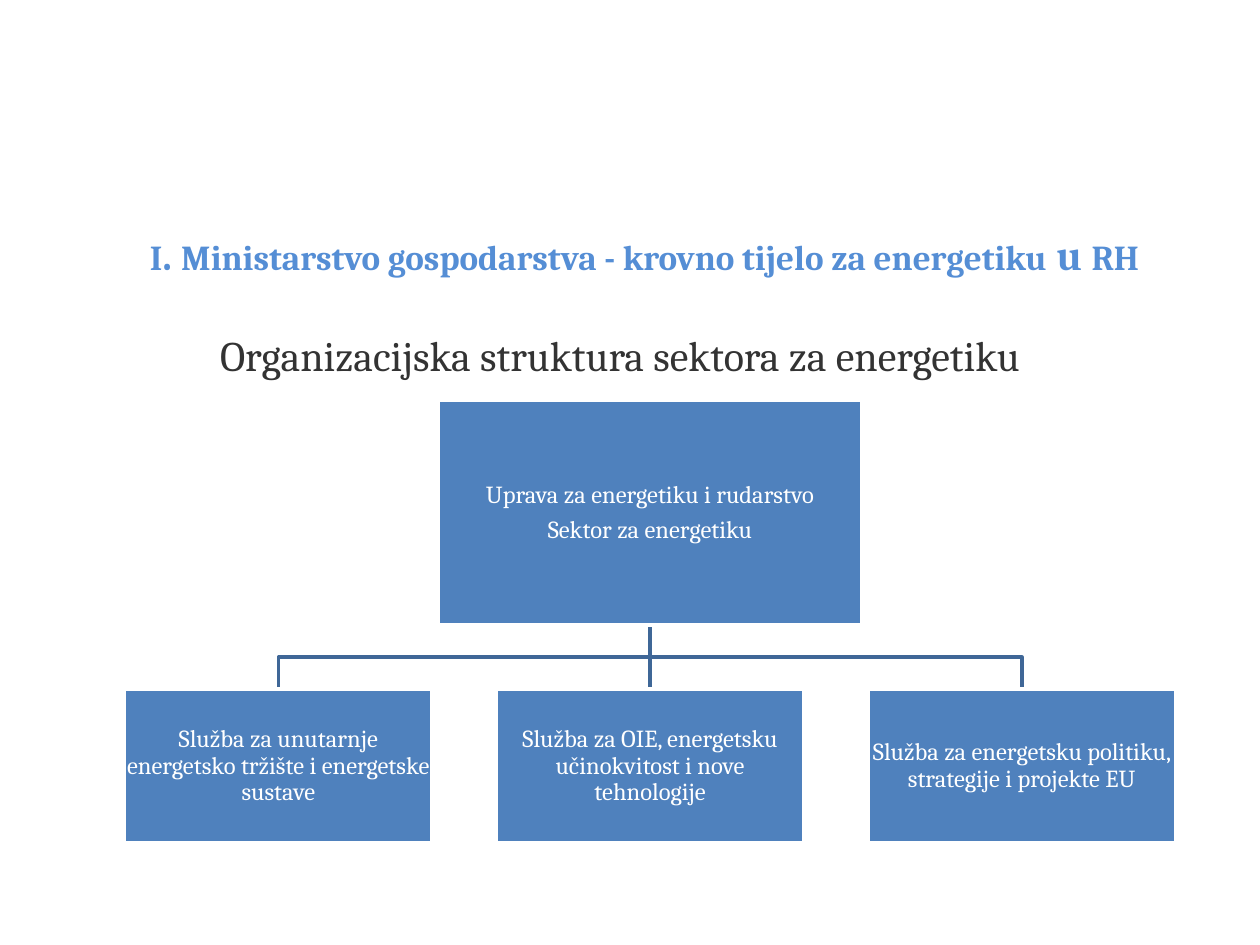
from dataclasses import dataclass
from typing import Any

import lxml.etree
import pptx
import pptx.dml.color
import pptx.enum.shapes
import pptx.enum.text
import pptx.oxml.ns
import pptx.util

Inches = pptx.util.Inches
Pt = pptx.util.Pt
RGBColor = pptx.dml.color.RGBColor
PP_ALIGN = pptx.enum.text.PP_ALIGN
MSO_ANCHOR = pptx.enum.text.MSO_ANCHOR

TITLE_BLUE = RGBColor(0x55, 0x8E, 0xD5)
DARK_GREY = RGBColor(0x33, 0x33, 0x33)
BOX_BLUE = RGBColor(0x4F, 0x81, 0xBD)
LINE_BLUE = RGBColor(0x3F, 0x67, 0x97)
WHITE = RGBColor(0xFF, 0xFF, 0xFF)

FONT = "Cambria"
LINE_WIDTH = Pt(2)
CENTRE = 5.16
UNIT_TOP = 5.47
UNIT_PITCH = 2.95


@dataclass(frozen=True)
class Unit:
    centre: float
    top: float
    width: float
    height: float
    lines: tuple[str, ...]


SECTOR = Unit(
    CENTRE, 3.18, 3.36, 1.78,
    ("Uprava za energetiku i rudarstvo", "Sektor za energetiku"),
)
SERVICES = [
    Unit(CENTRE + offset * UNIT_PITCH, UNIT_TOP, 2.44, 1.22, (text,))
    for offset, text in (
        (-1, "Služba za unutarnje energetsko tržište i energetske sustave"),
        (0, "Služba za OIE, energetsku učinokvitost i nove tehnologije"),
        (1, "Služba za energetsku politiku, strategije i projekte EU"),
    )
]
TITLE_SPANS = (
    ("I", 20),
    (". ", 24),
    ("Ministarstvo gospodarstva - krovno tijelo za energetiku", 20),
    (" u ", 24),
    ("RH", 20),
)


def apply_format(target: Any, values: dict[str, Any]) -> None:
    for name, value in values.items():
        setattr(target, name, value)


def add_span(para: Any, text: str, size: float, color: RGBColor, bold: bool = False) -> None:
    span = para.add_run()
    span.text = text
    apply_format(span.font, {"name": FONT, "size": Pt(size), "bold": bold})
    span.font.color.rgb = color


def add_title(slide: Any) -> None:
    title = slide.shapes.title
    apply_format(title, {
        "left": Inches(0.43), "top": Inches(1.78),
        "width": Inches(9.37), "height": Inches(0.47),
    })
    apply_format(title.text_frame, {"word_wrap": True, "vertical_anchor": MSO_ANCHOR.MIDDLE})
    para = title.text_frame.paragraphs[0]
    para.alignment = PP_ALIGN.CENTER
    for text, size in TITLE_SPANS:
        add_span(para, text, size, TITLE_BLUE, bold=True)


def add_subtitle(slide: Any) -> None:
    box = slide.shapes.add_textbox(Inches(0.67), Inches(2.57), Inches(8.5), Inches(0.5))
    box.text_frame.word_wrap = True
    para = box.text_frame.paragraphs[0]
    para.alignment = PP_ALIGN.CENTER
    add_span(para, "Organizacijska struktura sektora za energetiku", 24, DARK_GREY)


def add_branch(slide: Any, parent: Unit, child: Unit) -> None:
    bottom = parent.top + parent.height
    middle = (bottom + child.top) / 2
    builder = slide.shapes.build_freeform(Inches(parent.centre), Inches(bottom))
    corners = [(parent.centre, middle), (child.centre, middle), (child.centre, child.top)]
    builder.add_line_segments([(Inches(x), Inches(y)) for x, y in corners], close=False)
    branch = builder.convert_to_shape()
    branch.shadow.inherit = False
    branch.fill.background()
    branch.line.color.rgb = LINE_BLUE
    branch.line.width = LINE_WIDTH


def add_stem(slide: Any, parent: Unit, child: Unit) -> Any:
    stem = slide.shapes.add_connector(
        pptx.enum.shapes.MSO_CONNECTOR.STRAIGHT,
        Inches(parent.centre), Inches(parent.top + parent.height),
        Inches(child.centre), Inches(child.top),
    )
    stem.line.color.rgb = LINE_BLUE
    stem.line.width = LINE_WIDTH
    properties = stem._element.spPr
    lxml.etree.SubElement(properties, pptx.oxml.ns.qn("a:effectLst"))
    return stem


def add_unit(slide: Any, unit: Unit) -> Any:
    box = slide.shapes.add_shape(
        pptx.enum.shapes.MSO_SHAPE.RECTANGLE,
        Inches(unit.centre - unit.width / 2), Inches(unit.top),
        Inches(unit.width), Inches(unit.height),
    )
    box.shadow.inherit = False
    box.fill.solid()
    box.fill.fore_color.rgb = BOX_BLUE
    box.line.color.rgb = WHITE
    box.line.width = LINE_WIDTH
    frame = box.text_frame
    margins = ("margin_left", "margin_top", "margin_right", "margin_bottom")
    apply_format(frame, dict.fromkeys(margins, Inches(0.01)))
    apply_format(frame, {"word_wrap": True, "vertical_anchor": MSO_ANCHOR.MIDDLE})
    for index, text in enumerate(unit.lines):
        para = frame.add_paragraph() if index else frame.paragraphs[0]
        apply_format(para, {
            "alignment": PP_ALIGN.CENTER, "line_spacing": 0.9, "space_after": Pt(4.9),
        })
        add_span(para, text, 14, WHITE)
    return box


def main() -> None:
    deck = pptx.Presentation()
    apply_format(deck, {"slide_width": Inches(10), "slide_height": Inches(7.5)})
    slide = deck.slides.add_slide(deck.slide_layouts.get_by_name("Title Only"))
    add_title(slide)
    add_subtitle(slide)
    left, centre, right = SERVICES
    add_branch(slide, SECTOR, right)
    stem = add_stem(slide, SECTOR, centre)
    add_branch(slide, SECTOR, left)
    sector_box = add_unit(slide, SECTOR)
    service_boxes = [add_unit(slide, service) for service in SERVICES]
    stem.begin_connect(sector_box, 2)
    stem.end_connect(service_boxes[1], 0)
    deck.save("out.pptx")


if __name__ == "__main__":
    main()
